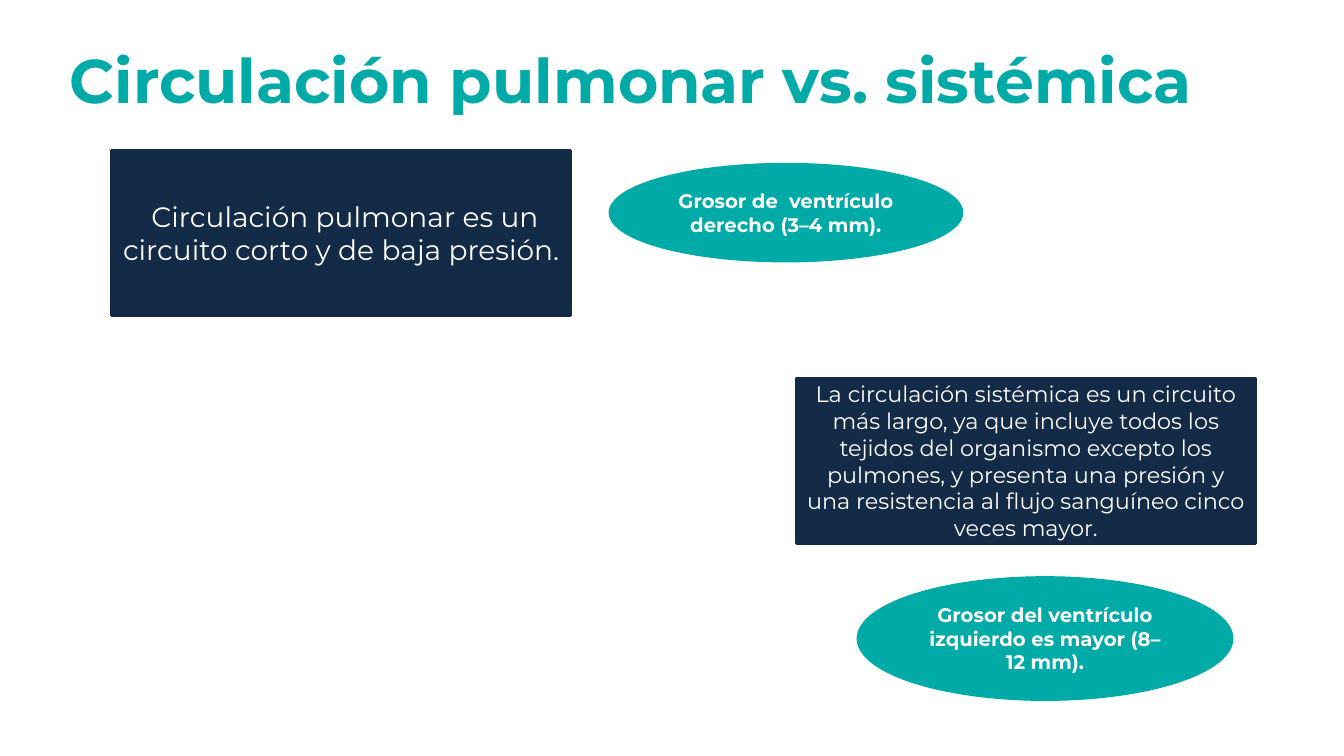
from dataclasses import dataclass

import pptx
import pptx.dml.color
import pptx.enum.shapes
import pptx.enum.text
import pptx.util

Inches = pptx.util.Inches
Pt = pptx.util.Pt
SHAPES = pptx.enum.shapes.MSO_SHAPE
ALIGN = pptx.enum.text.PP_ALIGN
MIDDLE = pptx.enum.text.MSO_ANCHOR.MIDDLE


@dataclass(frozen=True)
class Theme:
    font: str = "Montserrat"
    title_color: str = "00AAA7"
    navy: str = "142B48"
    teal: str = "00ABA7"
    white: str = "FFFFFF"
    title_size: int = 44
    lead_size: int = 20
    body_size: int = 16
    label_size: int = 14
    outline: int = 2


class SlideBuilder:
    def __init__(self, slide, theme):
        self.slide = slide
        self.theme = theme

    def fill_text(self, frame, text, size, color, bold=False, align=ALIGN.CENTER):
        frame.word_wrap = True
        frame.vertical_anchor = MIDDLE
        para = frame.paragraphs[0]
        para.alignment = align
        span = para.add_run()
        span.text = text
        font_values = {"name": self.theme.font, "size": Pt(size), "bold": bold}
        for name, value in font_values.items():
            setattr(span.font, name, value)
        span.font.color.rgb = pptx.dml.color.RGBColor.from_string(color)
        return para

    def title(self, area, text):
        box = self.slide.shapes.add_textbox(*map(Inches, area))
        para = self.fill_text(box.text_frame, text, self.theme.title_size,
                              self.theme.title_color, True, ALIGN.LEFT)
        para.line_spacing = 0.9

    def filled_shape(self, kind, area, text, size, color, bold=False):
        shape = self.slide.shapes.add_shape(kind, *map(Inches, area))
        shape.shadow.inherit = False
        rgb = pptx.dml.color.RGBColor.from_string(color)
        shape.fill.solid()
        shape.fill.fore_color.rgb = rgb
        shape.line.color.rgb = rgb
        shape.line.width = Pt(self.theme.outline)
        self.fill_text(shape.text_frame, text, size, self.theme.white, bold)

    def panel(self, left, top, text, size):
        self.filled_shape(SHAPES.RECTANGLE, (left, top, 4.55, 1.64), text, size, self.theme.navy)

    def label(self, area, text):
        self.filled_shape(SHAPES.OVAL, area, text, self.theme.label_size, self.theme.teal, True)


def main():
    deck = pptx.Presentation()
    deck.slide_width = Inches(13.33)
    deck.slide_height = Inches(7.5)
    theme = Theme()
    page = SlideBuilder(deck.slides.add_slide(deck.slide_layouts[6]), theme)

    page.title((0.59, 0.1, 11.5, 1.45), "Circulación pulmonar vs. sistémica")
    page.panel(1.11, 1.49, " Circulación pulmonar es un circuito corto y de baja presión.",
               theme.lead_size)
    page.panel(7.9, 3.75,
               "La circulación sistémica es un circuito más largo, ya que incluye todos "
               "los tejidos del organismo excepto los pulmones, y presenta una presión y "
               "una resistencia al flujo sanguíneo cinco veces mayor.",
               theme.body_size)
    page.label((8.51, 5.73, 3.71, 1.21), "Grosor del ventrículo izquierdo es mayor (8–12 mm).")
    page.label((6.05, 1.63, 3.49, 0.96), "Grosor de  ventrículo derecho (3–4 mm).")

    deck.save("out.pptx")


if __name__ == "__main__":
    main()
